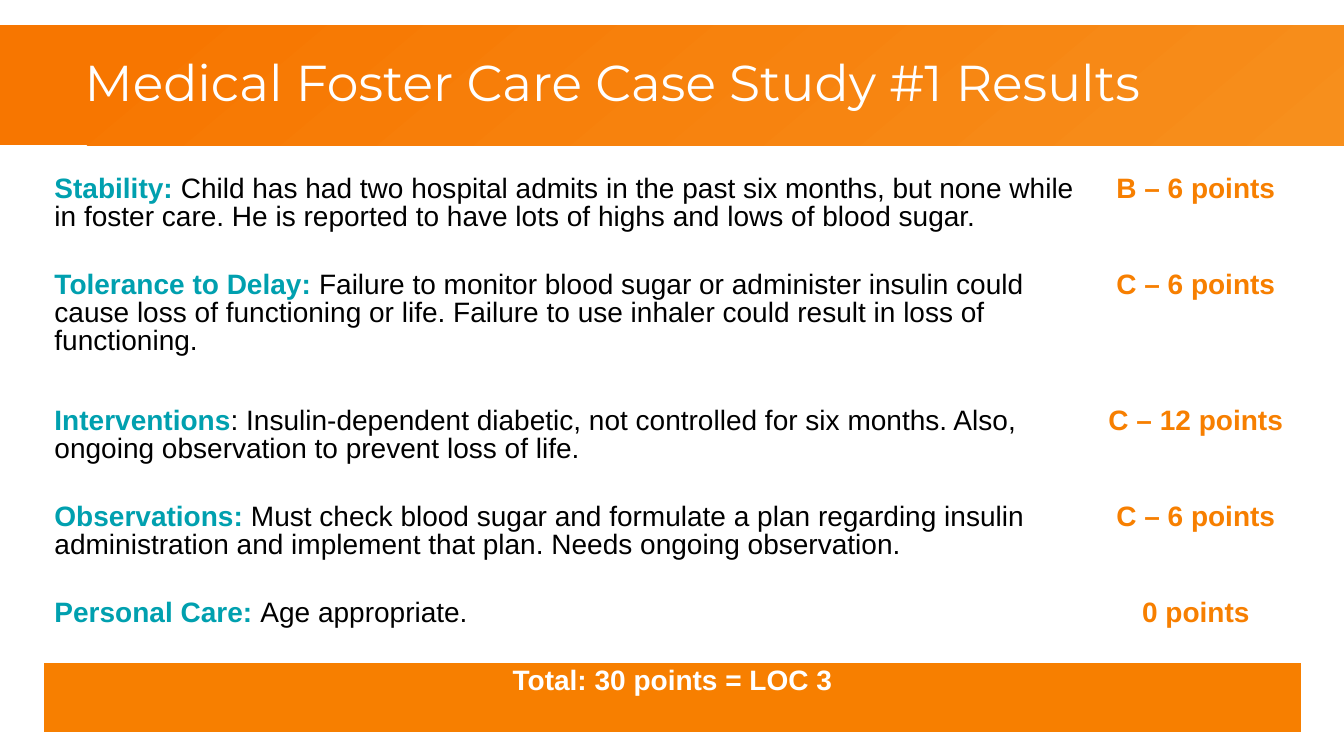
from pptx import Presentation
from pptx.dml.color import RGBColor
from pptx.enum.shapes import MSO_SHAPE
from pptx.enum.text import MSO_ANCHOR, PP_ALIGN
from pptx.oxml.ns import qn
from pptx.util import Inches, Pt

# Content
TITLE = "Medical Foster Care Case Study #1 Results"
RESULTS = [
    ("Stability: ", "Child has had two hospital admits in the past six months, but none "
     "while in foster care. He is reported to have lots of highs and lows of blood sugar.",
     "B – 6 points", 0.95),
    ("Tolerance to Delay: ", "Failure to monitor blood sugar or administer insulin could "
     "cause loss of functioning or life. Failure to use inhaler could result in loss of "
     "functioning.", "C – 6 points", 1.35),
    ("Interventions", ": Insulin-dependent diabetic, not controlled for six months. Also, "
     "ongoing observation to prevent loss of life.", "C – 12 points", 0.95),
    ("Observations:", " Must check blood sugar and formulate a plan regarding insulin "
     "administration and implement that plan. Needs ongoing observation.",
     "C – 6 points", 0.95),
    ("Personal Care: ", "Age appropriate.", "0 points", 0.68),
]
TOTAL, TOTAL_HEIGHT = "Total: 30 points = LOC 3", 0.68
COLUMNS = [10.38, 2.08]
TEAL, ORANGE, BLACK, WHITE = "00A0AF", "F77F00", "000000", "FFFFFF"
GRADIENT = [(0.09, "F77600"), (1, "F78F1C")]
NO_STYLE = "{2D5ABB26-0587-4C30-8999-92F81FD0307C}"


def rgb(value):
    return RGBColor.from_string(value)


def write(tf, runs, align=PP_ALIGN.LEFT, name="Arial", size=20):
    p = tf.paragraphs[0]
    p.alignment, p.line_spacing = align, 0.9
    for text, color, bold in runs:
        r = p.add_run()
        r.text = text
        for key, value in {"name": name, "size": Pt(size), "bold": bold}.items():
            setattr(r.font, key, value)
        r.font.color.rgb = rgb(color)


prs = Presentation()
prs.slide_width, prs.slide_height = Inches(13.33), Inches(7.5)
s = prs.slides.add_slide(prs.slide_layouts[5])

# Title band, placed behind the title
band = s.shapes.add_shape(MSO_SHAPE.RECTANGLE, 0, Inches(0.25), Inches(13.33), Inches(1.19))
band.shadow.inherit = False
band.line.fill.background()
band.fill.gradient()
band.fill.gradient_angle = 310
for stop, (position, color) in zip(band.fill.gradient_stops, GRADIENT):
    stop.position = position
    stop.color.rgb = rgb(color)
s.shapes._spTree.insert(2, band._element)

# Title
title = s.shapes.title
box = {"left": 0.74, "top": 0.26, "width": 12.22, "height": 1.18}
for key, value in box.items():
    setattr(title, key, Inches(value))
title.text_frame.vertical_anchor = MSO_ANCHOR.MIDDLE
title.text_frame.word_wrap = True
write(title.text_frame, [(TITLE, WHITE, False)], name="Montserrat", size=36)

# Results table
heights = [row[-1] for row in RESULTS] + [TOTAL_HEIGHT]
frame = s.shapes.add_table(len(heights), len(COLUMNS), Inches(0.44), Inches(1.7),
                           Inches(sum(COLUMNS)), Inches(sum(heights)))
table = frame.table
table.first_row = table.horz_banding = False
next(frame._element.iter(qn("a:tableStyleId"))).text = NO_STYLE
for column, width in zip(table.columns, COLUMNS):
    column.width = Inches(width)
for row, height in zip(table.rows, heights):
    row.height = Inches(height)
for cell in table.iter_cells():
    cell.fill.background()

for i, (label, finding, points, _) in enumerate(RESULTS):
    write(table.cell(i, 0).text_frame, [(label, TEAL, True), (finding, BLACK, False)])
    write(table.cell(i, 1).text_frame, [(points, ORANGE, True)], PP_ALIGN.CENTER)

# Total row
last = len(RESULTS)
total = table.cell(last, 0)
total.merge(table.cell(last, 1))
total.fill.solid()
total.fill.fore_color.rgb = rgb(ORANGE)
write(total.text_frame, [(TOTAL, WHITE, True)], PP_ALIGN.CENTER)

prs.save("out.pptx")
